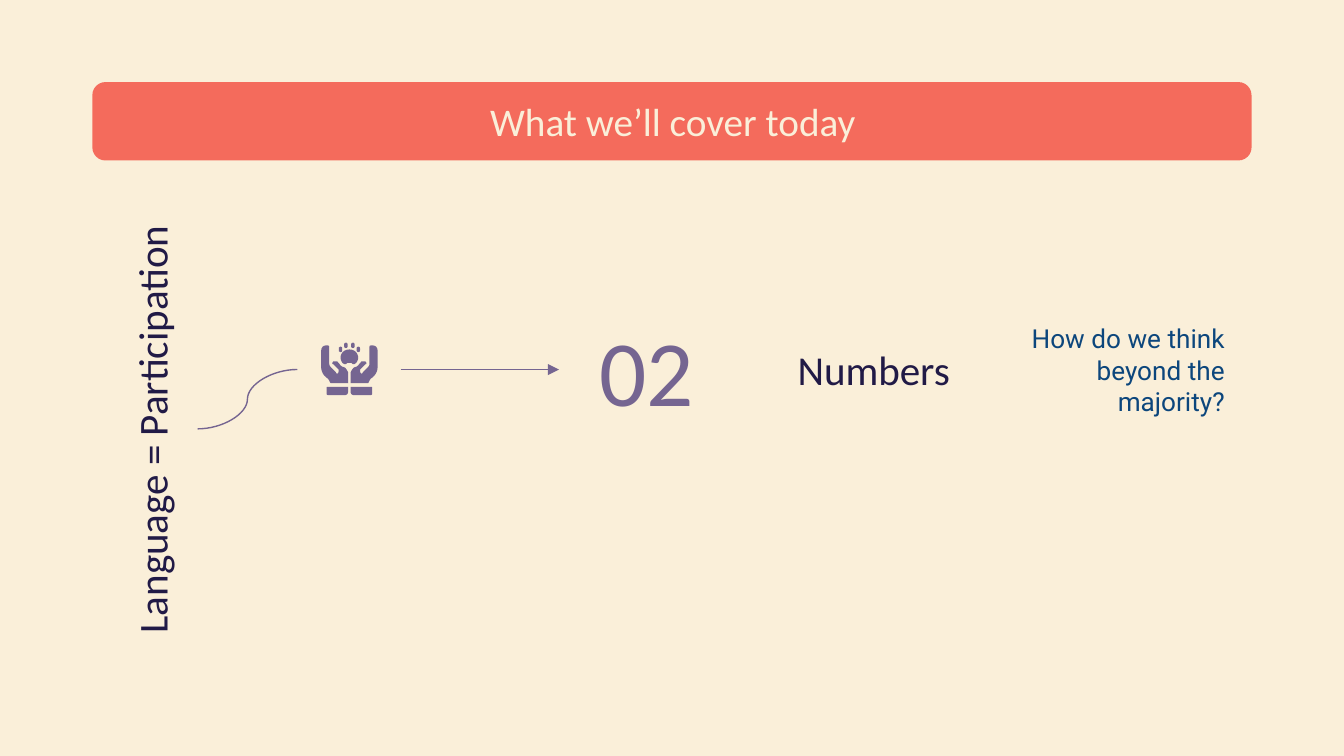
from lxml.etree import SubElement
from pptx import Presentation
from pptx.dml.color import RGBColor
from pptx.enum.shapes import MSO_CONNECTOR, MSO_SHAPE
from pptx.enum.text import MSO_ANCHOR, PP_ALIGN
from pptx.oxml.ns import qn
from pptx.util import Pt

CREAM, CORAL, PURPLE, NAVY, BLUE = "FAEFD9", "F46B5C", "756591", "211A46", "0C467C"

TITLE = "What we’ll cover today"
THEME = "Language = Participation"
# text, column width, size, font, colour, alignment
COLUMNS = [
    ("02", 93.6, 50, "Calibri", PURPLE, PP_ALIGN.CENTER),
    ("Numbers", 150, 22, "Calibri", NAVY, PP_ALIGN.CENTER),
    ("How do we think beyond the majority?", 120.2, 14, "Roboto", BLUE, PP_ALIGN.RIGHT),
]
COLUMNS_LEFT, ROW_TOP, ROW_HEIGHT = 299.5, 176.4, 43.2
ROW_MIDDLE = ROW_TOP + ROW_HEIGHT / 2

# Icon outlines in icon units around the vertical axis: pairs are corners,
# six numbers are a Bezier curve (two controls and an end).
ICON_AXIS, ICON_TOP, ICON_UNIT = 187.2, 183.6, 0.72
BALL = [
    (0, 5), (-4, 5, -7, 8, -6.5, 12), (-6, 14, -5, 16, -3, 16),
    (-2, 16, -2, 15, -1, 15), (1, 15), (2, 15, 2, 16, 3, 16),
    (5, 16, 6, 14, 6.5, 12), (7, 8, 4, 5, 0, 5),
]
HAND = [
    (17, 2), (16, 2, 15, 2, 15, 3), (15, 15), (15, 16, 15, 17, 14, 18),
    (10, 22), (10, 22, 10, 23, 9, 23), (8, 23, 8, 21, 8, 20), (12, 16),
    (13, 16, 13, 15, 12, 14), (12, 14, 11, 14, 11, 14), (10, 14, 9, 14, 9, 14),
    (7, 16, 7, 17, 5, 18), (3, 18, 2, 20, 1, 22), (1, 22, 1, 26, 1, 30),
    (14, 30), (15, 29, 15, 27, 17, 26), (21, 23, 21, 19, 21, 18), (21, 6),
    (21, 3, 19, 2, 17, 2),
]
CUFF = [
    (1, 33), (1, 37), (1, 38, 2, 39, 3, 39), (16, 39),
    (17, 39, 17, 38, 17, 38), (17, 34), (17, 33, 17, 33, 16, 33),
]
RAYS = [(1.3, 0), (5.3, 3)]
RAY_WIDTH, RAY_HEIGHT = 2.6, 4


def rgb(color):
    return RGBColor.from_string(color)


def paint(shape, color):
    """Flat fill with neither outline nor shadow."""
    shape.shadow.inherit = False
    shape.fill.solid()
    shape.fill.fore_color.rgb = rgb(color)
    shape.line.fill.background()


def add_text(text, left, top, width, height, size, font, color, align=PP_ALIGN.CENTER):
    box = slide.shapes.add_textbox(Pt(left), Pt(top), Pt(width), Pt(height))
    frame = box.text_frame
    frame.word_wrap = True
    frame.vertical_anchor = MSO_ANCHOR.MIDDLE
    frame.margin_left = frame.margin_right = Pt(7.2)
    frame.margin_top = frame.margin_bottom = Pt(7.2)
    paragraph = frame.paragraphs[0]
    paragraph.alignment = align
    run = paragraph.add_run()
    run.text = text
    run.font.size = Pt(size)
    run.font.name = font
    run.font.color.rgb = rgb(color)
    return box


def add_line(kind, start_x, start_y, end_x, end_y):
    line = slide.shapes.add_connector(kind, Pt(start_x), Pt(start_y), Pt(end_x), Pt(end_y))
    line.line.color.rgb = rgb(PURPLE)
    line.line.width = Pt(0.75)
    SubElement(line._element.spPr, qn("a:effectLst"))
    return line


def flatten(outline, steps=6):
    """Turn corners and Bezier curves into a list of points."""
    points = []
    for piece in outline:
        if len(piece) == 2:
            points.append(piece)
            continue
        x0, y0 = points[-1]
        x1, y1, x2, y2, x3, y3 = piece
        for step in range(1, steps + 1):
            t = step / steps
            a, b, c, d = (1 - t) ** 3, 3 * t * (1 - t) ** 2, 3 * t * t * (1 - t), t ** 3
            points.append((a * x0 + b * x1 + c * x2 + d * x3,
                           a * y0 + b * y1 + c * y2 + d * y3))
    return points


def add_icon_part(outline, side=1):
    """Draw an outline; side -1 mirrors it about the icon axis."""
    points = [(Pt(ICON_AXIS + side * x * ICON_UNIT), Pt(ICON_TOP + y * ICON_UNIT))
              for x, y in flatten(outline)]
    builder = slide.shapes.build_freeform(*points[0])
    builder.add_line_segments(points[1:], close=True)
    paint(builder.convert_to_shape(), PURPLE)


presentation = Presentation()
presentation.slide_width, presentation.slide_height = Pt(720), Pt(405)
slide = presentation.slides.add_slide(presentation.slide_layouts[6])
slide.background.fill.solid()
slide.background.fill.fore_color.rgb = rgb(CREAM)

banner = slide.shapes.add_shape(
    MSO_SHAPE.ROUNDED_RECTANGLE, Pt(49.5), Pt(44), Pt(621), Pt(42))
paint(banner, CORAL)
add_text(TITLE, 57, 42.5, 607, 45, 21, "Calibri", CREAM)

theme = add_text(THEME, -43.2, 205.2, 248.4, 49.7, 22, "Calibri", NAVY)
theme.rotation = 270

left = COLUMNS_LEFT
column_boxes = []
for text, width, *style in COLUMNS:
    column_boxes.append(add_text(text, left, ROW_TOP, width, ROW_HEIGHT, *style))
    left += width

add_line(MSO_CONNECTOR.CURVE, 105.9, 229.8, 159.3, ROW_MIDDLE)
arrow = add_line(MSO_CONNECTOR.STRAIGHT, 214.6, ROW_MIDDLE, COLUMNS_LEFT, ROW_MIDDLE)
arrow.end_connect(column_boxes[0], 1)
SubElement(arrow.line._get_or_add_ln(), qn("a:tailEnd"), type="triangle")

add_icon_part(BALL)
for side in (-1, 1):
    add_icon_part(HAND, side)
    add_icon_part(CUFF, side)
    for near, top in RAYS:
        center = ICON_AXIS + side * (near + RAY_WIDTH / 2) * ICON_UNIT
        ray = slide.shapes.add_shape(
            MSO_SHAPE.ROUNDED_RECTANGLE,
            Pt(center - RAY_WIDTH * ICON_UNIT / 2), Pt(ICON_TOP + top * ICON_UNIT),
            Pt(RAY_WIDTH * ICON_UNIT), Pt(RAY_HEIGHT * ICON_UNIT))
        ray.adjustments[0] = 0.5
        paint(ray, PURPLE)

presentation.save("out.pptx")
